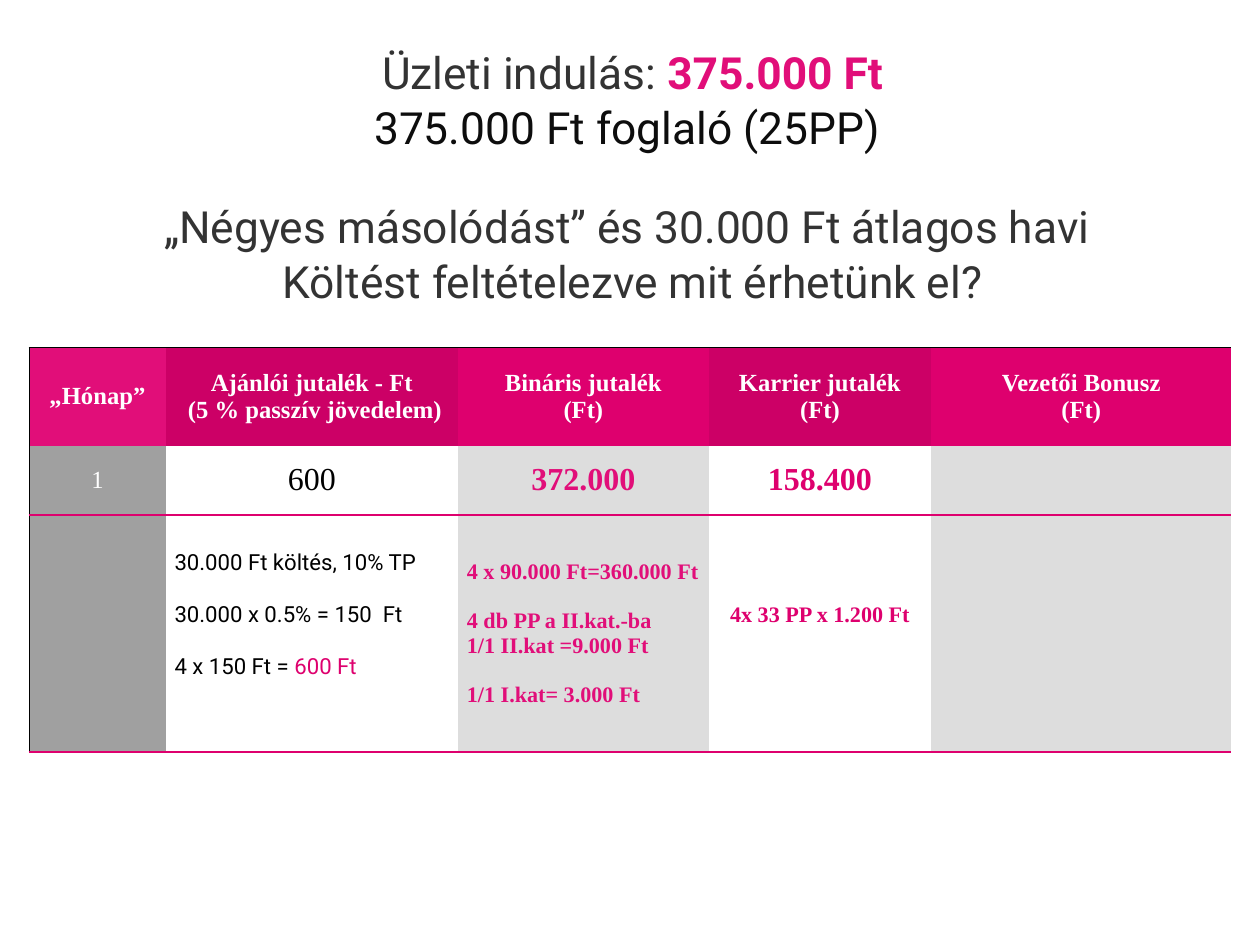
from dataclasses import dataclass

from lxml import etree
from pptx import Presentation
from pptx.dml.color import RGBColor
from pptx.enum.text import MSO_ANCHOR, MSO_AUTO_SIZE, PP_ALIGN
from pptx.oxml.ns import qn
from pptx.util import Pt

CENTER, LEFT = PP_ALIGN.CENTER, PP_ALIGN.LEFT
MIDDLE = MSO_ANCHOR.MIDDLE
FIXED_SIZE = MSO_AUTO_SIZE.NONE
TITLE_ONLY = 5


@dataclass(frozen=True)
class Theme:
    sans: str = "Roboto"
    serif: str = "Times New Roman"
    pink: str = "E10E79"
    magenta: str = "DE006E"
    crimson: str = "CC0066"
    charcoal: str = "333333"
    ink: str = "0D0D0D"
    black: str = "000000"
    white: str = "FFFFFF"
    gray: str = "A0A0A0"
    silver: str = "DDDDDD"
    title_size: float = 36
    amount_size: float = 26
    header_size: float = 20
    detail_size: float = 18


THEME = Theme()


@dataclass
class Line:
    """One paragraph: (text, format) runs and the space before it in points."""
    runs: list
    gap: float = 0


def text_format(name, size, color, bold=False):
    return {"name": name, "size": size, "color": color, "bold": bold}


class SlideBuilder:
    def __init__(self, presentation, theme):
        self.theme = theme
        self.slide = presentation.slides.add_slide(
            presentation.slide_layouts[TITLE_ONLY])

    def format_font(self, font, values):
        for key, value in values.items():
            if key == "color":
                font.color.rgb = RGBColor.from_string(value)
            else:
                setattr(font, key, Pt(value) if key == "size" else value)

    def fill_text(self, frame, lines, alignment, line_spacing=1.0):
        for index, line in enumerate(lines):
            paragraph = frame.paragraphs[0] if index == 0 else frame.add_paragraph()
            paragraph.alignment = alignment
            paragraph.line_spacing = line_spacing
            paragraph.space_before = Pt(line.gap)
            for text, values in line.runs:
                for part_index, part in enumerate(text.split("\n")):
                    if part_index:
                        paragraph.add_line_break()
                    run = paragraph.add_run()
                    run.text = part
                    self.format_font(run.font, values)

    def title(self, box, lines, line_spacing):
        shape = self.slide.shapes.title
        for key, value in zip(("left", "top", "width", "height"), box):
            setattr(shape, key, Pt(value))
        frame = shape.text_frame
        frame.word_wrap = True
        frame.auto_size = FIXED_SIZE
        frame.vertical_anchor = MIDDLE
        for side in ("left", "top", "right", "bottom"):
            setattr(frame, f"margin_{side}", Pt(4.32))
        self.fill_text(frame, lines, CENTER, line_spacing)

    def table(self, left, top, column_widths, row_heights):
        frame = self.slide.shapes.add_table(
            len(row_heights), len(column_widths), Pt(left), Pt(top),
            Pt(sum(column_widths)), Pt(sum(row_heights)))
        table = frame.table
        table.first_row = table.horz_banding = False
        for column, width in zip(table.columns, column_widths):
            column.width = Pt(width)
        for row, height in zip(table.rows, row_heights):
            row.height = Pt(height)
        return table

    def cell(self, cell, fill, borders, lines=(), alignment=CENTER, extra_bottom=0):
        cell.vertical_anchor = MIDDLE
        cell.margin_bottom = Pt(3.6 + extra_bottom)
        self.borders(cell, borders)
        cell.fill.solid()
        cell.fill.fore_color.rgb = RGBColor.from_string(fill)
        self.fill_text(cell.text_frame, lines, alignment)

    def borders(self, cell, borders):
        """Draw the given sides as (colour, points) and clear the others."""
        properties = cell._tc.get_or_add_tcPr()
        for side in "LRTB":
            line = etree.SubElement(properties, qn(f"a:ln{side}"))
            if side in borders:
                color, width = borders[side]
                line.set("w", str(Pt(width)))
                fill = etree.SubElement(line, qn("a:solidFill"))
                etree.SubElement(fill, qn("a:srgbClr")).set("val", color)
            else:
                etree.SubElement(line, qn("a:noFill"))


def add_heading(builder):
    theme = builder.theme
    charcoal, pink, ink = (
        text_format(theme.sans, theme.title_size, color, bold)
        for color, bold in ((theme.charcoal, False), (theme.pink, True),
                            (theme.ink, False)))
    builder.title((2.16, 29.52, 1023.84, 226.08), [
        Line([("Üzleti indulás: ", charcoal), ("375.000 Ft", pink)]),
        Line([("375.000 Ft foglaló (25PP) ", ink)]),
        Line([("„Négyes másolódást” és 30.000 Ft átlagos havi ", charcoal)], 36),
        Line([("Költést feltételezve mit érhetünk el?", charcoal)]),
    ], 1.03)


def add_commission_table(builder):
    theme = builder.theme
    table = builder.table(23.76, 282.24, [110.88, 237.6, 203.76, 180.72, 244.08],
                          [79.92, 56.16, 192.96])
    black_line, magenta_line = (theme.black, 1), (theme.magenta, 1.5)

    header = text_format(theme.serif, theme.header_size, theme.white, True)
    month = {**header, "bold": False}
    amount = text_format(theme.serif, theme.amount_size, theme.black)
    pink_amount = {**amount, "color": theme.pink, "bold": True}
    magenta_amount = {**pink_amount, "color": theme.magenta}
    detail = text_format(theme.sans, theme.detail_size, theme.black)
    magenta_detail = {**detail, "color": theme.magenta}
    pink_detail = text_format(theme.serif, theme.detail_size, theme.pink, True)
    career_detail = {**pink_detail, "color": theme.magenta}

    headings = ["„Hónap”", "Ajánlói jutalék - Ft\n (5 % passzív jövedelem)",
                "Bináris jutalék\n(Ft)", "Karrier jutalék\n(Ft)",
                "Vezetői Bonusz\n(Ft)"]
    amounts = [("1", month), ("600", amount), ("372.000", pink_amount),
               ("158.400", magenta_amount), None]
    referral = [Line([("30.000 Ft költés, 10% TP", detail)]),
                Line([("30.000 x 0.5% = 150  Ft", detail)], 21),
                Line([("4 x 150 Ft = ", detail), ("600 Ft", magenta_detail)], 21)]
    binary = [Line([(text, pink_detail)], gap) for text, gap in (
        ("4 x 90.000 Ft=360.000 Ft", 0), ("4 db PP a II.kat.-ba", 20),
        ("1/1 II.kat =9.000 Ft", 0), ("1/1 I.kat= 3.000 Ft", 20))]
    career = [Line([("4x 33 PP x 1.200 Ft", career_detail)])]

    contents = [
        [{"lines": [Line([(text, header)])]} for text in headings],
        [{"lines": [Line([run])]} if run else {} for run in amounts],
        [{}, {"lines": referral, "alignment": LEFT, "extra_bottom": 30},
         {"lines": binary, "alignment": LEFT},
         {"lines": career, "extra_bottom": 30}, {}],
    ]
    body_fills = [theme.gray, theme.white, theme.silver, theme.white, theme.silver]
    fills = [[theme.pink, theme.crimson, theme.magenta, theme.crimson, theme.magenta],
             body_fills, body_fills]
    row_borders = [{"T": black_line}, {"B": magenta_line},
                   {"T": magenta_line, "B": magenta_line}]

    for row, (row_contents, row_fills) in enumerate(zip(contents, fills)):
        for column, (content, fill) in enumerate(zip(row_contents, row_fills)):
            borders = dict(row_borders[row])
            if column == 0:
                borders["L"] = black_line
            builder.cell(table.cell(row, column), fill, borders, **content)


def main():
    presentation = Presentation()
    presentation.slide_width, presentation.slide_height = Pt(1024), Pt(768)
    builder = SlideBuilder(presentation, THEME)
    add_heading(builder)
    add_commission_table(builder)
    presentation.save("out.pptx")


if __name__ == "__main__":
    main()
